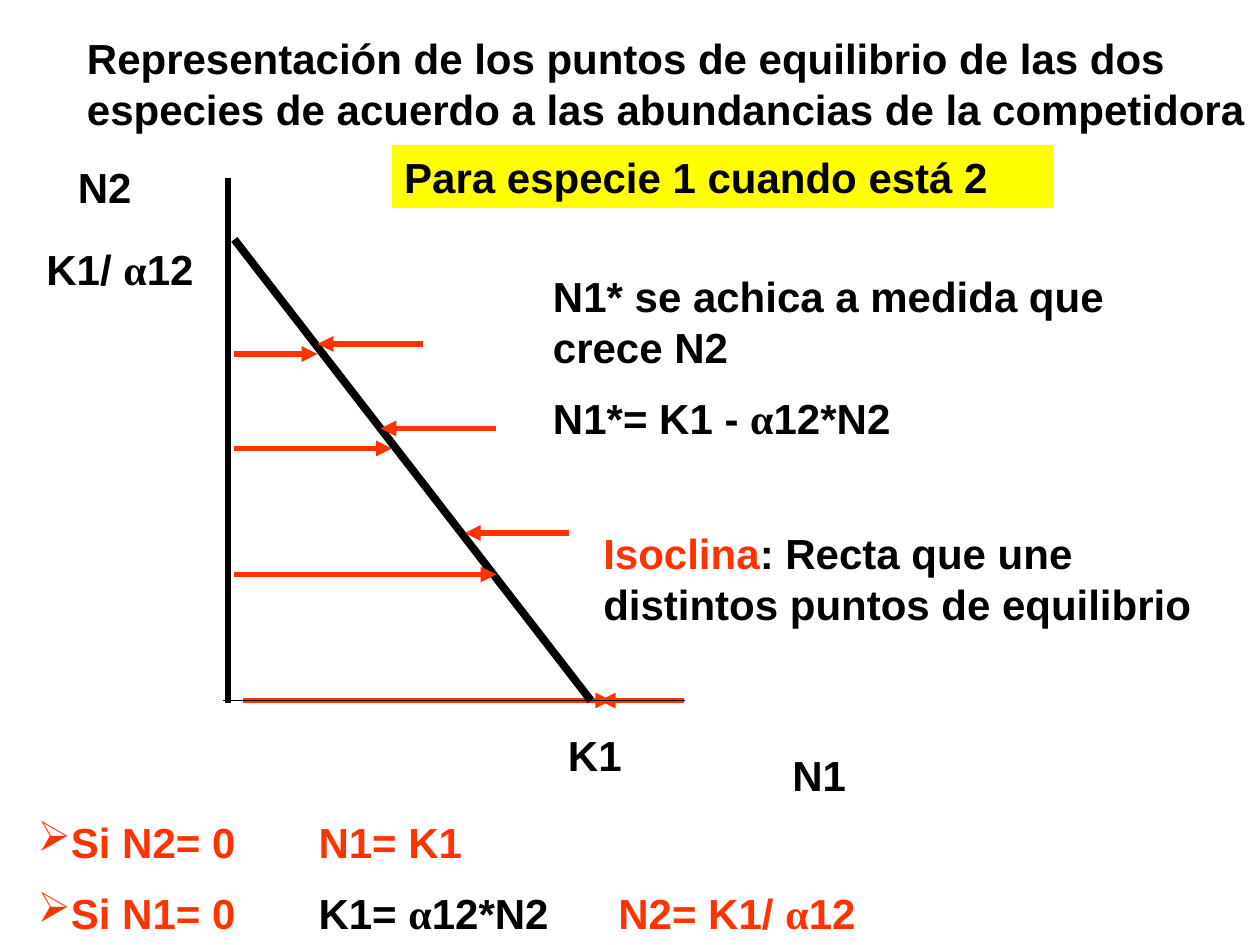
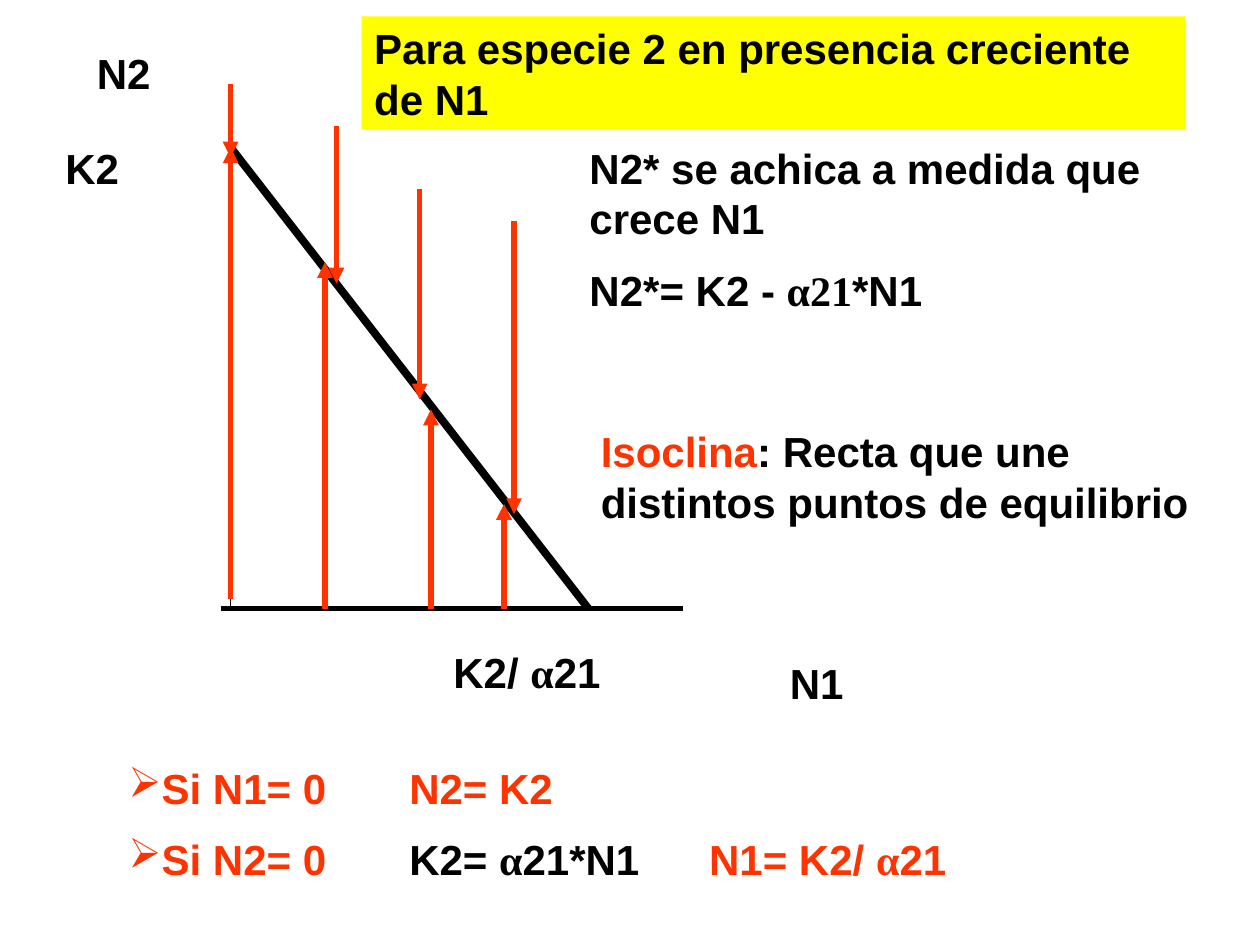
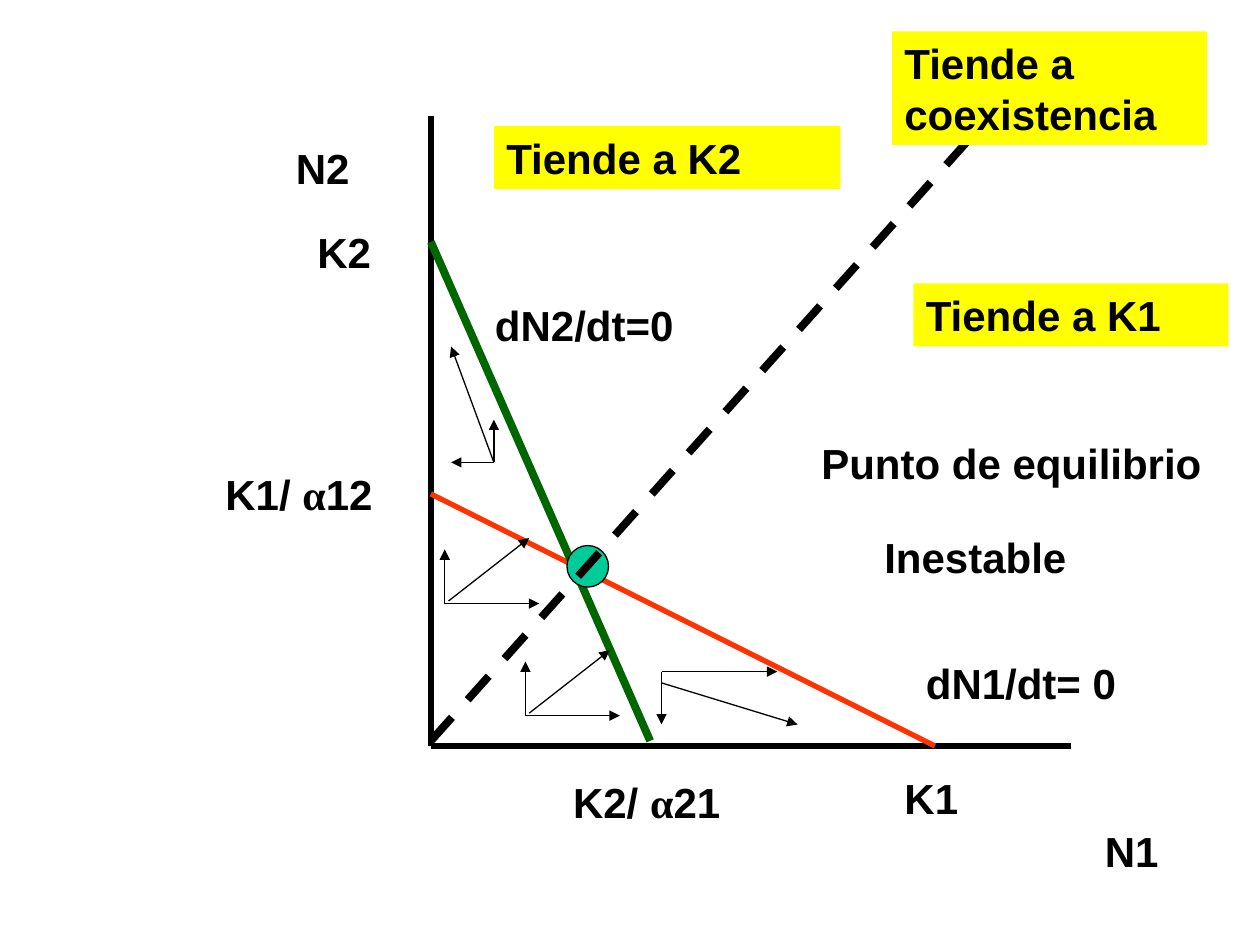
from lxml import etree
from pptx import Presentation
from pptx.dml.color import RGBColor
from pptx.enum.dml import MSO_LINE
from pptx.enum.shapes import MSO_CONNECTOR, MSO_SHAPE
from pptx.enum.text import MSO_ANCHOR, MSO_AUTO_SIZE, PP_ALIGN
from pptx.oxml import parse_xml
from pptx.oxml.ns import nsdecls, qn
from pptx.util import Inches, Pt

BLACK, RED, GREEN, TEAL, YELLOW = "000000", "FF3300", "006600", "00CC99", "FFFF00"
BODY_FONT, GREEK_FONT = "Arial", "Times New Roman"
TITLE_ONLY, BLANK = 5, 6
BULLET_XML = (
    f'<a:buClr {nsdecls("a")}><a:srgbClr val="{RED}"/></a:buClr>',
    f'<a:buChar {nsdecls("a")} char="➢"/>',
    f'<a:tabLst {nsdecls("a")}>'
    + "".join(f'<a:tab pos="{Inches(stop)}" algn="l"/>' for stop in (2.23, 4.61))
    + "</a:tabLst>",
)


def write(box, at, paragraphs, fill=None, bulleted=False):
    """Place box and fill it with paragraphs of (text, colour); _x_ sets x in the Greek font."""
    for side, value in zip(("left", "top", "width", "height"), at):
        setattr(box, side, Inches(value))
    if fill:
        box.fill.solid()
        box.fill.fore_color.rgb = RGBColor.from_string(fill)
    frame = box.text_frame
    frame_format = {"word_wrap": True, "auto_size": MSO_AUTO_SIZE.NONE,
                    "vertical_anchor": MSO_ANCHOR.TOP}
    for name, value in frame_format.items():
        setattr(frame, name, value)
    for index, pieces in enumerate(paragraphs):
        paragraph = frame.add_paragraph() if index else frame.paragraphs[0]
        paragraph.alignment = PP_ALIGN.LEFT
        paragraph.space_before = Pt(12 if index else 0)
        if bulleted:
            properties = paragraph._p.get_or_add_pPr()
            properties.set("marL", "0")
            properties.set("indent", "0")
            for xml in BULLET_XML:
                properties.append(parse_xml(xml))
        for text, colour in pieces:
            for part, words in enumerate(text.split("_")):
                if not words:
                    continue
                run = paragraph.add_run()
                run.text = words
                font_format = {"name": GREEK_FONT if part % 2 else BODY_FONT,
                               "size": Pt(24), "bold": True}
                for name, value in font_format.items():
                    setattr(run.font, name, value)
                run.font.color.rgb = RGBColor.from_string(colour)


def draw_line(slide, start, end, colour=BLACK, width=3, arrow=False):
    line = slide.shapes.add_connector(
        MSO_CONNECTOR.STRAIGHT, *(Inches(value) for value in (*start, *end)))
    line.line.color.rgb = RGBColor.from_string(colour)
    line.line.width = Pt(width)
    if arrow:
        etree.SubElement(line.line._get_or_add_ln(), qn("a:tailEnd"), type="triangle")
    etree.SubElement(line._element.spPr, qn("a:effectLst"))
    return line


prs = Presentation()
prs.slide_width, prs.slide_height = Inches(10), Inches(7.5)

# Isoclines of each species: title, axes, arrows towards the isocline, labels
species_slides = [
    {
        "own": 1, "other": 2,
        "title": ("Representación de los puntos de equilibrio de las dos especies "
                  "de acuerdo a las abundancias de la competidora"),
        "title_at": (0.59, 0.21, 9.45, 0.9), "title_fill": None,
        "axis_arrows": [((1.93, 5.56), (4.85, 5.56)), ((5.43, 5.56), (4.76, 5.56))],
        "axes": [((1.81, 1.41), (1.81, 5.58), 3), ((1.77, 5.56), (5.44, 5.56), 0.75)],
        "isocline": ((1.86, 1.9), (4.69, 5.56)),
        "arrows": [((1.86, 4.56), (3.94, 4.56)), ((1.86, 3.56), (3.11, 3.56)),
                   ((1.86, 2.81), (2.52, 2.81)), ((3.36, 2.73), (2.52, 2.73)),
                   ((3.94, 3.4), (3.02, 3.4)), ((4.52, 4.23), (3.69, 4.23))],
        "labels": [("N1", 6.19, 5.9), ("K1", 4.41, 5.74),
                   ("N2", 0.52, 1.23), ("K1/ _α_12", 0.27, 1.88)],
        "formula": "N1*= K1 - _α_12*N2",
        "formula_at": (4.29, 2.1), "definition_at": (4.69, 4.14), "cases_at": (0.2, 6.43),
    },
    {
        "own": 2, "other": 1,
        "title": "Para especie 2 en presencia creciente de N1",
        "title_at": (2.87, 0.13, 6.54, 0.9), "title_fill": YELLOW,
        "axis_arrows": [],
        "axes": [((1.83, 0.67), (1.83, 4.83), 0.75), ((1.75, 4.83), (5.42, 4.83), 3)],
        "isocline": ((1.83, 1.17), (4.67, 4.83)),
        "arrows": [((2.58, 4.83), (2.58, 2.08)), ((3.42, 4.83), (3.42, 3.25)),
                   ((1.83, 4.75), (1.83, 1.17)), ((1.83, 0.67), (1.83, 1.25)),
                   ((4, 4.83), (4, 4)), ((2.67, 1), (2.67, 2.25)),
                   ((3.33, 1.5), (3.33, 3.17)), ((4.08, 1.75), (4.08, 4.08))],
        "labels": [("N1", 6.17, 5.17), ("N2", 0.67, 0.33),
                   ("K2", 0.42, 1.08), ("K2/ _α_21", 3.5, 5.08)],
        "formula": "N2*= K2 - _α21_*N1",
        "formula_at": (4.58, 1.08), "definition_at": (4.67, 3.33), "cases_at": (0.92, 6),
    },
]

for species in species_slides:
    own, other = species["own"], species["other"]
    slide = prs.slides.add_slide(prs.slide_layouts[TITLE_ONLY])
    write(slide.shapes.title, species["title_at"], [[(species["title"], BLACK)]],
          species["title_fill"])

    for start, end in species["axis_arrows"]:
        draw_line(slide, start, end, RED, arrow=True)
    for start, end, width in species["axes"]:
        draw_line(slide, start, end, width=width)
    draw_line(slide, *species["isocline"], width=4.5)
    for start, end in species["arrows"]:
        draw_line(slide, start, end, RED, arrow=True)

    explanation = [[(f"N{own}* se achica a medida que crece N{other}", BLACK)],
                   [(species["formula"], BLACK)]]
    definition = [[("Isoclina", RED),
                   (": Recta que une distintos puntos de equilibrio", BLACK)]]
    alpha = f"_α_{own}{other}"
    cases = [[(f"Si N{other}= 0\tN{own}= K{own}", RED)],
             [(f"Si N{own}= 0", RED), (f"\tK{own}= {alpha}*N{other}", BLACK),
              (f"\tN{other}= K{own}/ {alpha}", RED)]]
    blocks = [((*species["formula_at"], 5.25, 1.5), explanation, False),
              ((*species["definition_at"], 4.92, 0.9), definition, False),
              ((*species["cases_at"], 8.67, 1.1), cases, True)]
    blocks += [((left, top, 1.63, 0.5), [[(text, BLACK)]], False)
               for text, left, top in species["labels"]]
    for at, paragraphs, bulleted in blocks:
        write(slide.shapes.add_textbox(0, 0, 0, 0), at, paragraphs, bulleted=bulleted)
    if own == 1:
        write(slide.shapes.add_textbox(0, 0, 0, 0), (3.11, 1.15, 5.25, 0.5),
              [[("Para especie 1 cuando está 2", BLACK)]], YELLOW)

# Both isoclines together: unstable equilibrium
slide = prs.slides.add_slide(prs.slide_layouts[BLANK])
origin = (3.42, 5.92)
draw_line(slide, (3.42, 0.92), origin)
draw_line(slide, origin, (8.5, 5.92))
draw_line(slide, (3.42, 3.92), (7.42, 5.92), RED)
draw_line(slide, (3.42, 1.92), (5.16, 5.88), GREEN, 4.5)

equilibrium = slide.shapes.add_shape(
    MSO_SHAPE.OVAL, Inches(4.5), Inches(4.33), Inches(0.33), Inches(0.33))
equilibrium.shadow.inherit = False
equilibrium.fill.solid()
equilibrium.fill.fore_color.rgb = RGBColor.from_string(TEAL)
equilibrium.line.color.rgb = RGBColor.from_string(BLACK)
equilibrium.line.width = Pt(0.75)
draw_line(slide, (3.42, 5.88), (7.67, 1.13), width=4.5).line.dash_style = MSO_LINE.DASH

trajectories = [
    ((3.92, 3.67), (3.92, 3.33)), ((3.92, 3.67), (3.58, 3.67)), ((3.92, 3.67), (3.58, 2.75)),
    ((5.25, 5.33), (6.17, 5.33)), ((5.25, 5.33), (5.25, 5.75)), ((5.25, 5.42), (6.33, 5.75)),
]
for x, y in ((3.53, 4.79), (4.17, 5.68)):
    trajectories += [((x, y), (x, y - 0.43)), ((x, y), (x + 0.75, y)),
                     ((x + 0.03, y - 0.02), (x + 0.67, y - 0.52))]
for start, end in trajectories:
    draw_line(slide, start, end, width=0.75, arrow=True)

for text, at, fill in [
    ("N2", (2.25, 1.08, 1, 0.5), None),
    ("N1", (8.67, 6.5, 1.08, 0.5), None),
    ("K2", (2.42, 1.75, 0.75, 0.5), None),
    ("K1", (7.08, 6.08, 1.17, 0.5), None),
    ("K2/ _α_21", (4.45, 6.11, 1.47, 0.5), None),
    ("K1/ _α_12", (1.69, 3.67, 1.47, 0.5), None),
    ("dN1/dt= 0", (7.25, 5.17, 2.25, 0.5), None),
    ("dN2/dt=0", (3.83, 2.33, 2.08, 0.5), None),
    ("Punto de equilibrio", (6.42, 3.42, 3.25, 0.5), None),
    ("Inestable", (6.92, 4.17, 2.42, 0.5), None),
    ("Tiende a K1", (7.25, 2.25, 2.5, 0.5), YELLOW),
    ("Tiende a K2", (3.92, 1, 2.75, 0.5), YELLOW),
    ("Tiende a coexistencia", (7.08, 0.25, 2.5, 0.9), YELLOW),
]:
    write(slide.shapes.add_textbox(0, 0, 0, 0), at, [[(text, BLACK)]], fill)

prs.save("out.pptx")
